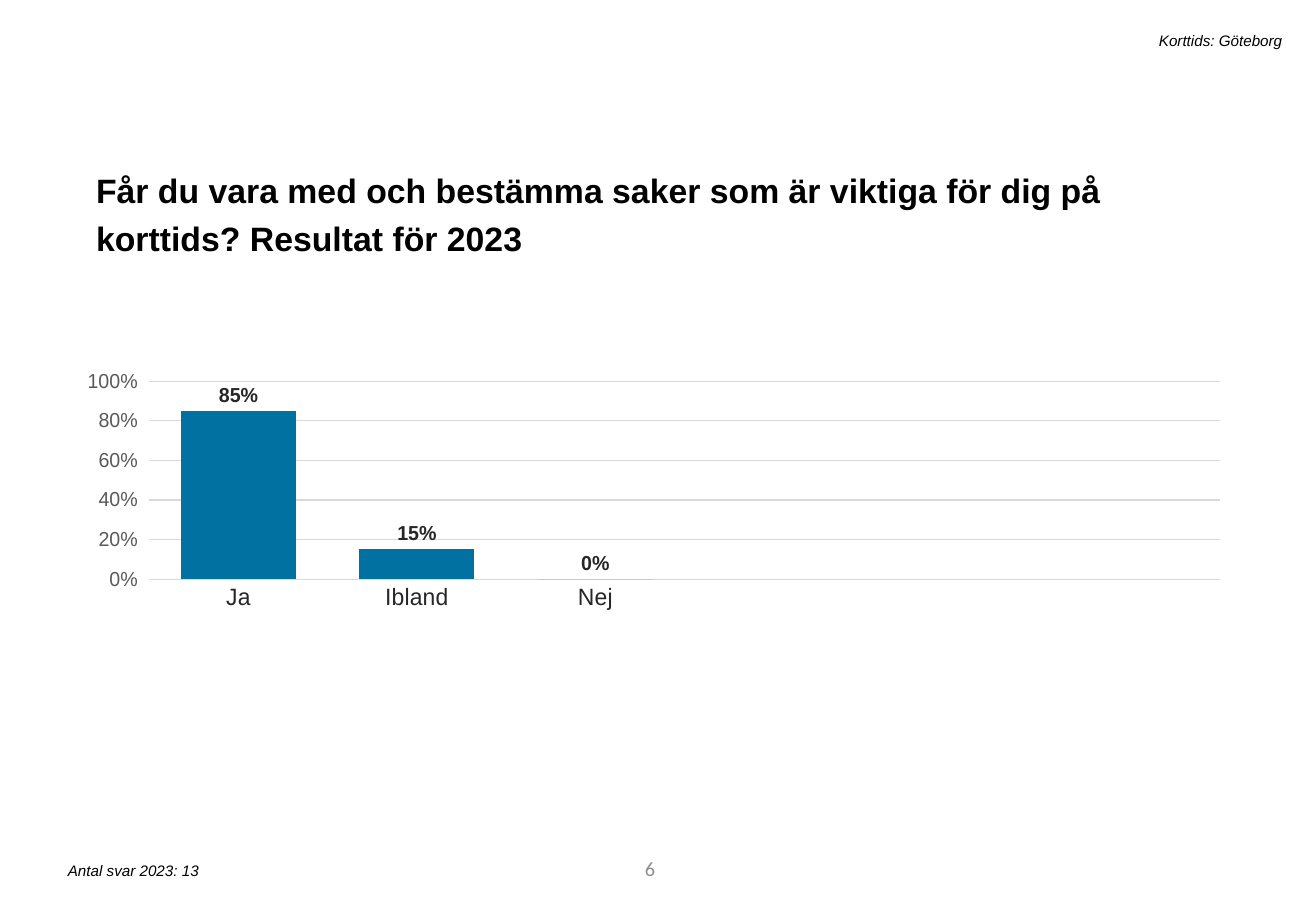
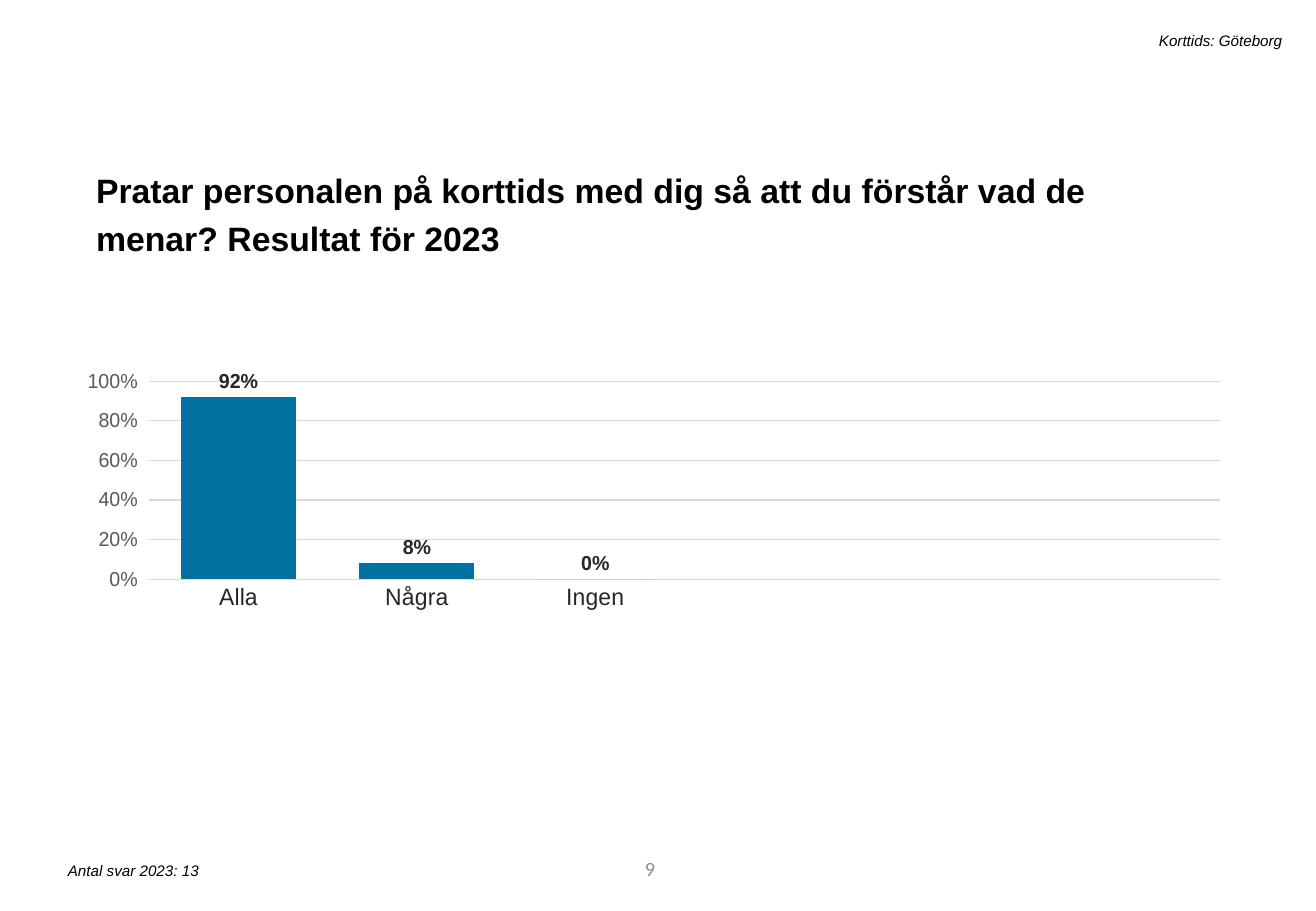
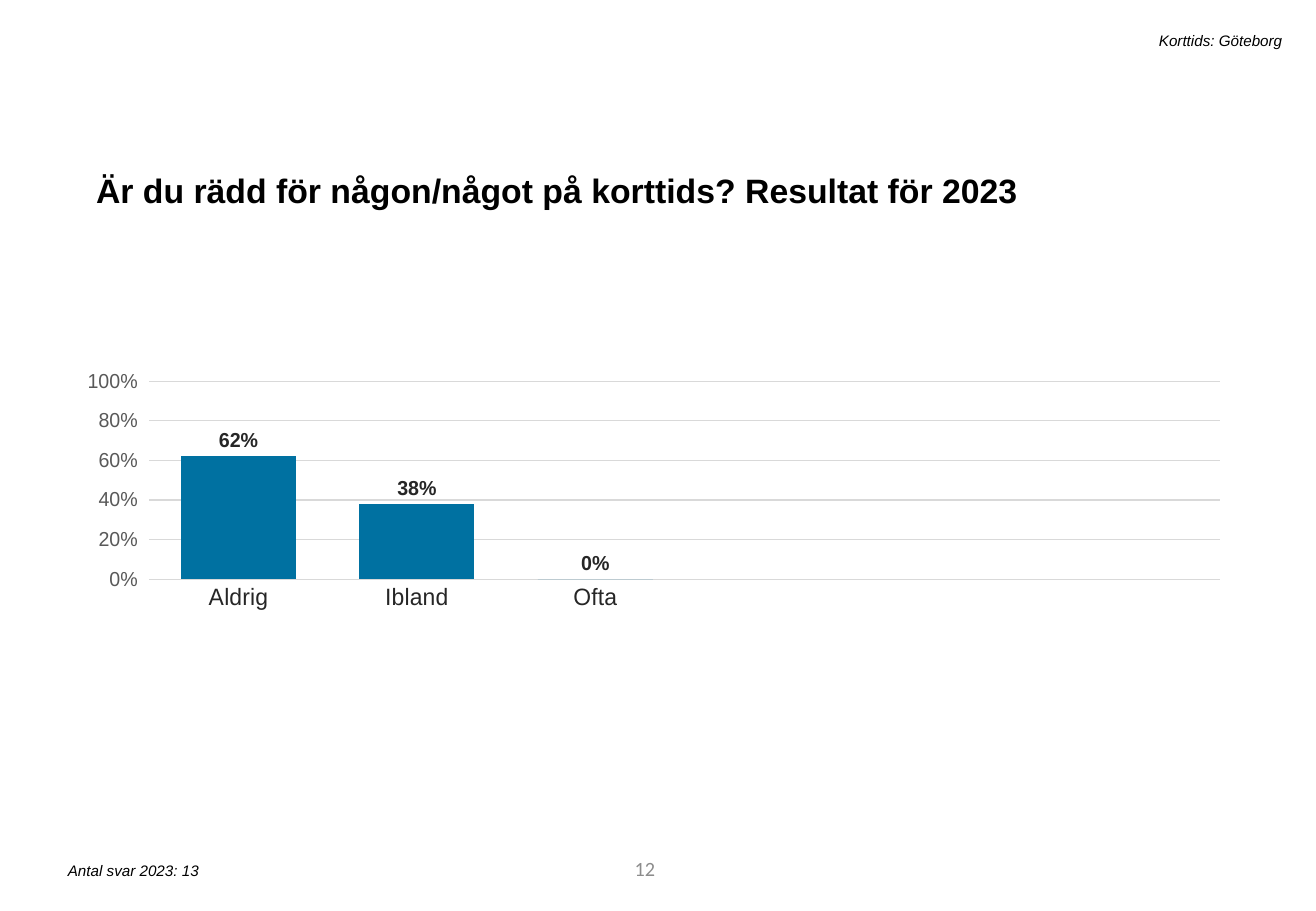
from lxml import etree
from pptx import Presentation
from pptx.chart.data import CategoryChartData
from pptx.dml.color import RGBColor
from pptx.enum.chart import XL_CHART_TYPE, XL_LABEL_POSITION, XL_TICK_MARK
from pptx.enum.text import MSO_ANCHOR, MSO_AUTO_SIZE, PP_ALIGN
from pptx.oxml.ns import qn
from pptx.util import Inches, Pt

COLUMNS = XL_CHART_TYPE.COLUMN_CLUSTERED
OUTSIDE_END = XL_LABEL_POSITION.OUTSIDE_END
TICK_NONE, TICK_OUTSIDE = XL_TICK_MARK.NONE, XL_TICK_MARK.OUTSIDE
TOP, MIDDLE = MSO_ANCHOR.TOP, MSO_ANCHOR.MIDDLE
LEFT, RIGHT = PP_ALIGN.LEFT, PP_ALIGN.RIGHT
FIT_SHAPE, FIT_NONE = MSO_AUTO_SIZE.SHAPE_TO_FIT_TEXT, MSO_AUTO_SIZE.NONE

TITLE_ONLY_LAYOUT = 5
CATEGORY_SLOTS = 6

COLORS = {
    "text": "000000",
    "page_number": "8C8C8C",
    "column": "0071A1",
    "grid": "D9D9D9",
    "value_axis": "595959",
    "label": "262626",
}

# Left, top, width and height in inches
BOXES = {
    "title": (0.69, 1.28, 9.4, 0.47),
    "unit": (1.79, 0.21, 8.86, 0.25),
    "answers": (0.46, 7.04, 4.41, 0.25),
    "page_number": (3.05, 6.95, 2.44, 0.4),
    "chart": (0.72, 2.53, 9.4, 3.95),
}

# Inner plot area as shares of the chart
PLOT_AREA = {"x": 0.025, "y": 0.154, "w": 0.966, "h": 0.413}

FONTS = {
    "title": {"name": "Arial", "size": Pt(20), "bold": True, "color": "text"},
    "note": {"name": "Arial", "size": Pt(9), "italic": True, "color": "text"},
    "page_number": {"name": "Calibri", "size": Pt(12), "color": "page_number"},
    "chart": {"name": "Arial", "size": Pt(10), "color": "text"},
    "category_axis": {"name": "Arial", "size": Pt(14), "color": "label"},
    "value_axis": {"name": "Arial", "size": Pt(12), "color": "value_axis"},
    "data_label": {"name": "Arial", "size": Pt(12), "bold": True, "color": "label"},
}

QUESTIONS = [
    {
        "page": 6,
        "title": "Får du vara med och bestämma saker som är viktiga för dig på "
                 "korttids? Resultat för 2023",
        "results": {"Ja": 0.85, "Ibland": 0.15, "Nej": 0},
    },
    {
        "page": 9,
        "title": "Pratar personalen på korttids med dig så att du förstår vad de "
                 "menar? Resultat för 2023",
        "results": {"Alla": 0.92, "Några": 0.08, "Ingen": 0},
    },
    {
        "page": 12,
        "title": "Är du rädd för någon/något på korttids? Resultat för 2023",
        "results": {"Aldrig": 0.62, "Ibland": 0.38, "Ofta": 0},
    },
]


def color(name):
    return RGBColor.from_string(COLORS[name])


def set_attributes(target, values):
    for name, value in values.items():
        setattr(target, name, value)


def format_font(font, style):
    values = dict(FONTS[style])
    font.color.rgb = color(values.pop("color"))
    set_attributes(font, values)


def format_line(line):
    line.color.rgb = color("grid")
    line.width = Pt(0.75)


def fill_text(shape, text, style, frame_values, paragraph_values):
    frame = shape.text_frame
    set_attributes(frame, {"word_wrap": True, **frame_values})
    paragraph = frame.paragraphs[0]
    set_attributes(paragraph, paragraph_values)
    run = paragraph.add_run()
    run.text = text
    format_font(run.font, style)


def add_title(slide, text, box):
    title = slide.shapes.title
    for name, length in zip(("left", "top", "width", "height"), box):
        setattr(title, name, Inches(length))
    fill_text(title, text, "title",
              {"vertical_anchor": TOP, "auto_size": FIT_SHAPE},
              {"alignment": LEFT, "line_spacing": 1.2, "space_before": Pt(10)})


def add_text(slide, text, box, style, alignment, anchor=TOP, auto_size=FIT_SHAPE):
    shape = slide.shapes.add_textbox(*map(Inches, box))
    fill_text(shape, text, style,
              {"vertical_anchor": anchor, "auto_size": auto_size},
              {"alignment": alignment})


def set_plot_area(chart):
    plot_area = chart.plots[0]._element.getparent()
    for layout in plot_area.findall(qn("c:layout")):
        plot_area.remove(layout)
    layout = etree.Element(qn("c:layout"))
    plot_area.insert(0, layout)
    manual = etree.SubElement(layout, qn("c:manualLayout"))
    settings = {"layoutTarget": "inner", "xMode": "edge", "yMode": "edge", **PLOT_AREA}
    for name, value in settings.items():
        etree.SubElement(manual, qn(f"c:{name}")).set("val", str(value))


def add_result_chart(slide, results, box):
    # Unused slots keep the columns at the same width on every slide
    unused = CATEGORY_SLOTS - len(results)
    data = CategoryChartData(number_format="0%")
    data.categories = [*results, *[""] * unused]
    data.add_series("Series 1", [*results.values(), *[None] * unused])
    chart = slide.shapes.add_chart(COLUMNS, *map(Inches, box), data).chart
    set_attributes(chart, {"has_title": False, "has_legend": False})
    format_font(chart.font, "chart")
    set_plot_area(chart)

    # Columns and their labels
    plot = chart.plots[0]
    set_attributes(plot, {"gap_width": 55, "vary_by_categories": False})
    series = plot.series[0]
    series.format.fill.solid()
    series.format.fill.fore_color.rgb = color("column")
    labels = series.data_labels
    set_attributes(labels, {
        "show_value": True, "position": OUTSIDE_END,
        "number_format": "0%", "number_format_is_linked": False,
    })
    format_font(labels.font, "data_label")

    # Category axis
    category_axis = chart.category_axis
    set_attributes(category_axis, {
        "major_tick_mark": TICK_NONE, "minor_tick_mark": TICK_NONE,
        "has_major_gridlines": False,
    })
    format_line(category_axis.format.line)
    format_font(category_axis.tick_labels.font, "category_axis")

    # Value axis
    value_axis = chart.value_axis
    set_attributes(value_axis, {
        "minimum_scale": 0, "maximum_scale": 1, "major_unit": 0.2,
        "major_tick_mark": TICK_OUTSIDE, "minor_tick_mark": TICK_NONE,
        "has_major_gridlines": True,
    })
    format_line(value_axis.major_gridlines.format.line)
    value_axis.format.line.fill.background()
    set_attributes(value_axis.tick_labels, {
        "number_format": "0%", "number_format_is_linked": False,
    })
    format_font(value_axis.tick_labels.font, "value_axis")


def add_question_slide(presentation, question):
    slide = presentation.slides.add_slide(presentation.slide_layouts[TITLE_ONLY_LAYOUT])
    add_text(slide, str(question["page"]), BOXES["page_number"], "page_number",
             RIGHT, MIDDLE, FIT_NONE)
    add_result_chart(slide, question["results"], BOXES["chart"])
    add_title(slide, question["title"], BOXES["title"])
    add_text(slide, "Korttids: Göteborg", BOXES["unit"], "note", RIGHT)
    add_text(slide, "Antal svar 2023: 13", BOXES["answers"], "note", LEFT)


def main():
    presentation = Presentation()
    presentation.slide_width = Inches(10.83)
    presentation.slide_height = Inches(7.5)
    for question in QUESTIONS:
        add_question_slide(presentation, question)
    presentation.save("out.pptx")


if __name__ == "__main__":
    main()
